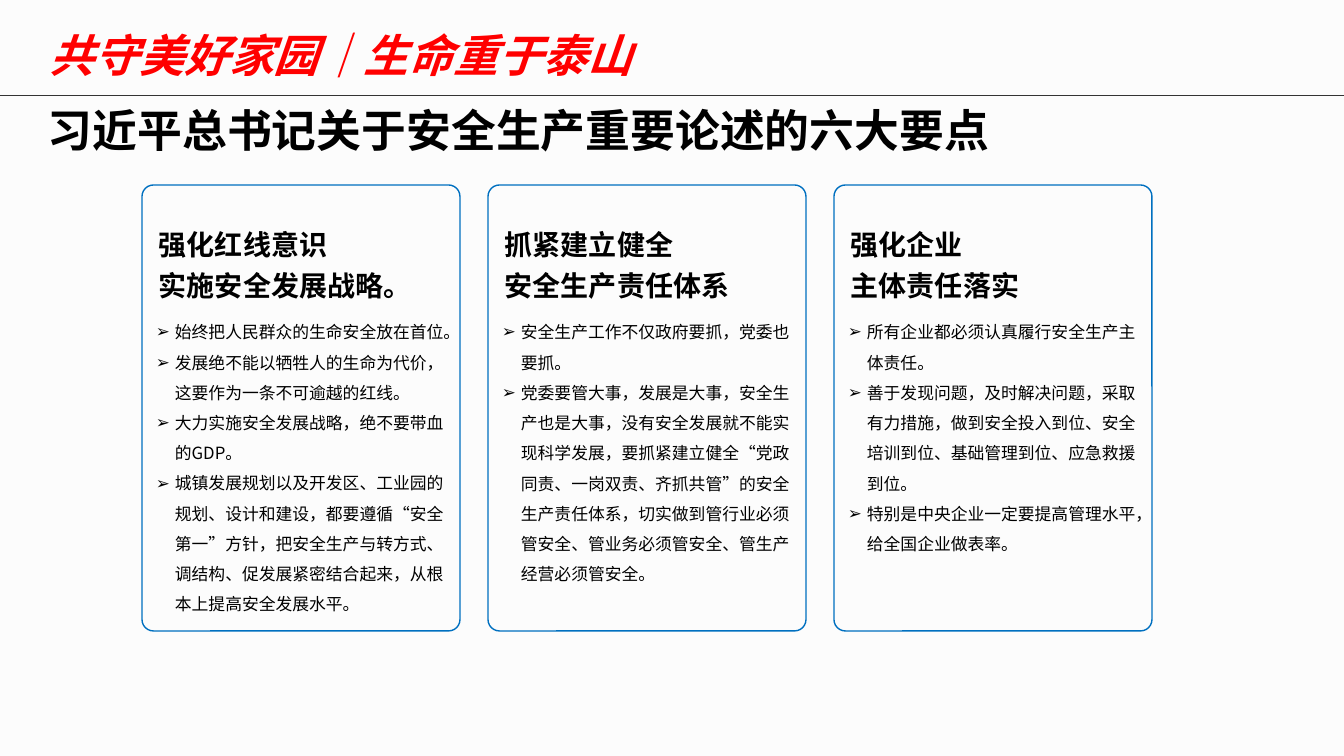
from lxml import etree
from pptx import Presentation
from pptx.dml.color import RGBColor
from pptx.enum.lang import MSO_LANGUAGE_ID
from pptx.enum.shapes import MSO_CONNECTOR, MSO_SHAPE
from pptx.enum.text import MSO_AUTO_SIZE
from pptx.oxml.ns import qn
from pptx.util import Emu, Pt

STRAIGHT = MSO_CONNECTOR.STRAIGHT
ROUNDED = MSO_SHAPE.ROUNDED_RECTANGLE
FIT_SHAPE = MSO_AUTO_SIZE.SHAPE_TO_FIT_TEXT
CHINESE = MSO_LANGUAGE_ID.SIMPLIFIED_CHINESE

COLORS = {"bg": "FCFCFC", "rule": "333333", "slogan": "FF0000",
          "text": "000000", "border": "0070C0"}
CJK = "Noto Sans CJK SC"
LATIN = "Arial"
WIDTH, HEIGHT = 1344, 756
CARD_LEFT, CARD_TOP, CARD_W, CARD_H, CARD_PITCH = 142, 185, 318, 446, 346

# Each card: heading lines, body height, bullet points
CARDS = [
    (["强化红线意识", "实施安全发展战略。"], 312, [
        "始终把人民群众的生命安全放在首位。",
        "发展绝不能以牺牲人的生命为代价，这要作为一条不可逾越的红线。",
        "大力实施安全发展战略，绝不要带血的GDP。",
        "城镇发展规划以及开发区、工业园的规划、设计和建设，都要遵循“安全第一”方针，"
        "把安全生产与转方式、调结构、促发展紧密结合起来，从根本上提高安全发展水平。"]),
    (["抓紧建立健全", "安全生产责任体系"], 281, [
        "安全生产工作不仅政府要抓，党委也要抓。",
        "党委要管大事，发展是大事，安全生产也是大事，没有安全发展就不能实现科学发展，"
        "要抓紧建立健全“党政同责、一岗双责、齐抓共管”的安全生产责任体系，"
        "切实做到管行业必须管安全、管业务必须管安全、管生产经营必须管安全。"]),
    (["强化企业", "主体责任落实"], 251, [
        "所有企业都必须认真履行安全生产主体责任。",
        "善于发现问题，及时解决问题，采取有力措施，做到安全投入到位、"
        "安全培训到位、基础管理到位、应急救援到位。",
        "特别是中央企业一定要提高管理水平，给全国企业做表率。"]),
]
HEADING_WIDTHS = [275, 247, 190]


def px(n):
    return Emu(round(n * 914400 / 100.8))


def rgb(name):
    return RGBColor.from_string(COLORS[name])


def add_bullet(p):
    pPr = p._p.get_or_add_pPr()
    pPr.set("marL", str(px(19)))
    pPr.set("indent", str(px(-19)))
    etree.SubElement(pPr, qn("a:buFont")).set("typeface", LATIN)
    etree.SubElement(pPr, qn("a:buChar")).set("char", "➢")


def add_text(s, box, lines, size, color="text", font=CJK, bold=False,
             italic=False, spacing=None, bullets=False, wrap=True):
    tf = s.shapes.add_textbox(*map(px, box)).text_frame
    tf.word_wrap = wrap
    tf.auto_size = FIT_SHAPE
    for i, line in enumerate(lines):
        p = tf.paragraphs[0] if i == 0 else tf.add_paragraph()
        if bullets:
            add_bullet(p)
        if spacing:
            p.line_spacing = spacing
        r = p.add_run()
        r.text = line
        f = r.font
        f.size, f.bold, f.italic = Pt(size), bold, italic
        f.color.rgb = rgb(color)
        f.name = font
        f.language_id = CHINESE
        etree.SubElement(r._r.get_or_add_rPr(), qn("a:ea")).set("typeface", CJK)


def add_header(s, left, top, width):
    # Rule across the slide
    rule = s.shapes.add_connector(STRAIGHT, px(left), px(top + 95),
                                  px(left + width), px(top + 95))
    rule.line.color.rgb = rgb("rule")
    rule.line.width = Pt(0.5)
    etree.SubElement(rule._element.spPr, qn("a:effectLst"))
    # Slogan and title
    add_text(s, (left + 40, top + 23, 766, 65), ["共守美好家园｜生命重于泰山"], 32,
             color="slogan", bold=True, italic=True)
    add_text(s, (left + 38, top + 98, 1228, 65),
             ["习近平总书记关于安全生产重要论述的六大要点"], 32, font=LATIN, bold=True)


def add_card(s, left, top, width, height, heading, heading_w, body_h, points):
    # Frame
    sp = s.shapes.add_shape(ROUNDED, px(left), px(top), px(width), px(height))
    sp.adjustments[0] = 0.036
    sp.shadow.inherit = False
    sp.fill.background()
    sp.line.color.rgb = rgb("border")
    sp.line.width = Pt(1)
    # Heading and bullet points
    add_text(s, (left + 7, top + 31, heading_w, 88), heading, 20, bold=True,
             spacing=1.2, wrap=False)
    add_text(s, (left + 4, top + 122, width + 3, body_h), points, 12,
             spacing=1.5, bullets=True)


def main():
    prs = Presentation()
    prs.slide_width, prs.slide_height = px(WIDTH), px(HEIGHT)
    s = prs.slides.add_slide(prs.slide_layouts[6])
    s.background.fill.solid()
    s.background.fill.fore_color.rgb = rgb("bg")
    add_header(s, 0, 0, WIDTH)
    for i, (heading, body_h, points) in enumerate(CARDS):
        add_card(s, CARD_LEFT + i * CARD_PITCH, CARD_TOP, CARD_W, CARD_H,
                 heading, HEADING_WIDTHS[i], body_h, points)
    prs.save("out.pptx")


if __name__ == "__main__":
    main()
